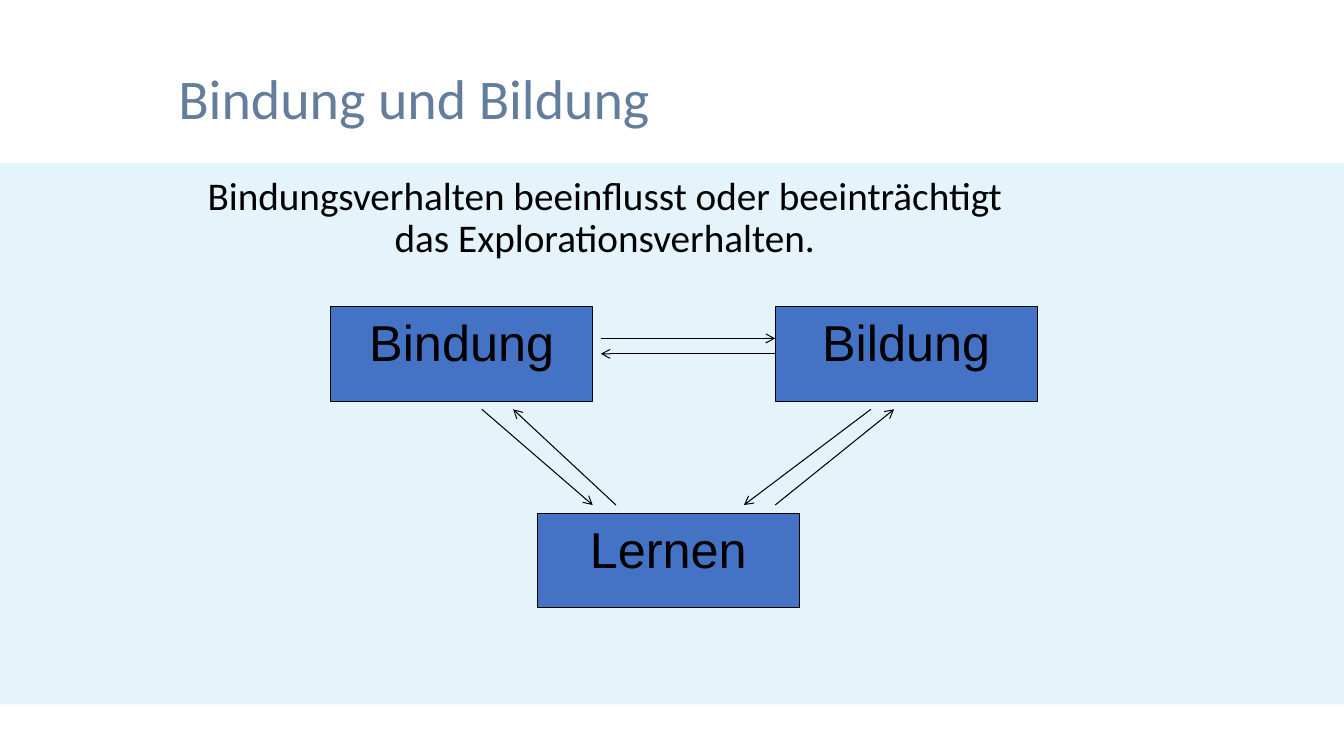
from lxml.etree import SubElement
from pptx import Presentation
from pptx.dml.color import RGBColor
from pptx.enum.shapes import MSO_CONNECTOR, MSO_SHAPE
from pptx.enum.text import MSO_ANCHOR, PP_ALIGN
from pptx.oxml.ns import qn
from pptx.util import Pt

PALE_BLUE = RGBColor(0xE5, 0xF3, 0xFA)
TITLE_BLUE = RGBColor(0x65, 0x7D, 0x9D)
NODE_BLUE = RGBColor(0x44, 0x72, 0xC4)
BLACK = RGBColor(0, 0, 0)

PAGE_WIDTH, PAGE_HEIGHT = 960, 540
NODE_WIDTH, NODE_HEIGHT = 187.2, 67.7
ARROW_GAP = 5.76


def place(shape, left, top, width, height):
    shape.left, shape.top = Pt(left), Pt(top)
    shape.width, shape.height = Pt(width), Pt(height)


def write(shape, text, font, size, color, align=PP_ALIGN.LEFT,
          anchor=MSO_ANCHOR.TOP, line_spacing=1.0, plain=False):
    """Fill the shape with one paragraph; plain removes bullet and indent."""
    frame = shape.text_frame
    frame.word_wrap = True
    frame.vertical_anchor = anchor
    para = frame.paragraphs[0]
    if plain:
        properties = para._p.get_or_add_pPr()
        properties.set("marL", "0")
        properties.set("indent", "0")
        SubElement(properties, qn("a:buNone"))
    para.alignment = align
    para.line_spacing = line_spacing
    para.space_before = Pt(0)
    span = para.add_run()
    span.text = text
    span.font.name, span.font.size = font, Pt(size)
    span.font.color.rgb = color


def add_rectangle(page, left, top, width, height, fill, line=None):
    shape = page.shapes.add_shape(MSO_SHAPE.RECTANGLE, Pt(left), Pt(top),
                                  Pt(width), Pt(height))
    shape.shadow.inherit = False
    shape.fill.solid()
    shape.fill.fore_color.rgb = fill
    if line is None:
        shape.line.fill.background()
    else:
        shape.line.color.rgb = line
        shape.line.width = Pt(0.75)
    return shape


def add_node(page, left, top, label):
    node = add_rectangle(page, left, top, NODE_WIDTH, NODE_HEIGHT,
                         NODE_BLUE, BLACK)
    write(node, label, "Arial", 36, BLACK, align=PP_ALIGN.CENTER)
    return node


def add_arrow(page, start, end):
    arrow = page.shapes.add_connector(MSO_CONNECTOR.STRAIGHT,
                                      *map(Pt, start + end))
    arrow.line.color.rgb = BLACK
    arrow.line.width = Pt(0.75)
    SubElement(arrow.line._get_or_add_ln(), qn("a:tailEnd"), type="arrow")
    SubElement(arrow._element.spPr, qn("a:effectLst"))
    return arrow


def add_background_band(page, top, height):
    band = add_rectangle(page, 0, top, PAGE_WIDTH, height, PALE_BLUE)
    page.shapes.title._element.addprevious(band._element)


def fill_text(page, left, top, width):
    title, body = page.shapes.title, page.placeholders[1]
    place(title, left, top, width, 65.5)
    write(title, "Bindung und Bildung", "Calibri", 40, TITLE_BLUE,
          anchor=MSO_ANCHOR.MIDDLE, line_spacing=0.9)
    place(body, left, top + 82.8, width, 338.4)
    write(body, "Bindungsverhalten beeinflusst oder beeinträchtigt "
          "das Explorationsverhalten.", "Calibri", 28, BLACK,
          align=PP_ALIGN.CENTER, line_spacing=0.9, plain=True)


def add_diagram(page, left, top, width, height):
    """Draw three nodes as a triangle, with arrows both ways between them."""
    right_node = left + width - NODE_WIDTH
    low_node = top + height - NODE_HEIGHT
    add_node(page, left, top, "Bindung")
    add_node(page, left + 147.6, low_node, "Lernen")
    bildung = add_node(page, right_node, top, "Bildung")

    row_end = left + NODE_WIDTH + ARROW_GAP
    middle = top + NODE_HEIGHT / 2
    add_arrow(page, (row_end, middle - 11), (right_node, middle - 11))
    back = add_arrow(page, (right_node, middle), (row_end, middle))
    back.begin_connect(bildung, 1)

    upper = top + NODE_HEIGHT + ARROW_GAP
    lower = low_node - ARROW_GAP
    for upper_x, lower_x, downward in ((108, 187.2, True),
                                       (130.3, 203.8, False),
                                       (385.9, 295.2, True),
                                       (402.5, 317.5, False)):
        ends = (left + upper_x, upper), (left + lower_x, lower)
        add_arrow(page, *(ends if downward else ends[::-1]))


def main():
    deck = Presentation()
    deck.slide_width, deck.slide_height = Pt(PAGE_WIDTH), Pt(PAGE_HEIGHT)
    page = deck.slides.add_slide(deck.slide_layouts[1])
    add_background_band(page, 116.6, 386.6)
    fill_text(page, 120.2, 39.6, 623.5)
    add_diagram(page, 236.2, 218.9, 504.7, 215.3)
    deck.save("out.pptx")


if __name__ == "__main__":
    main()
